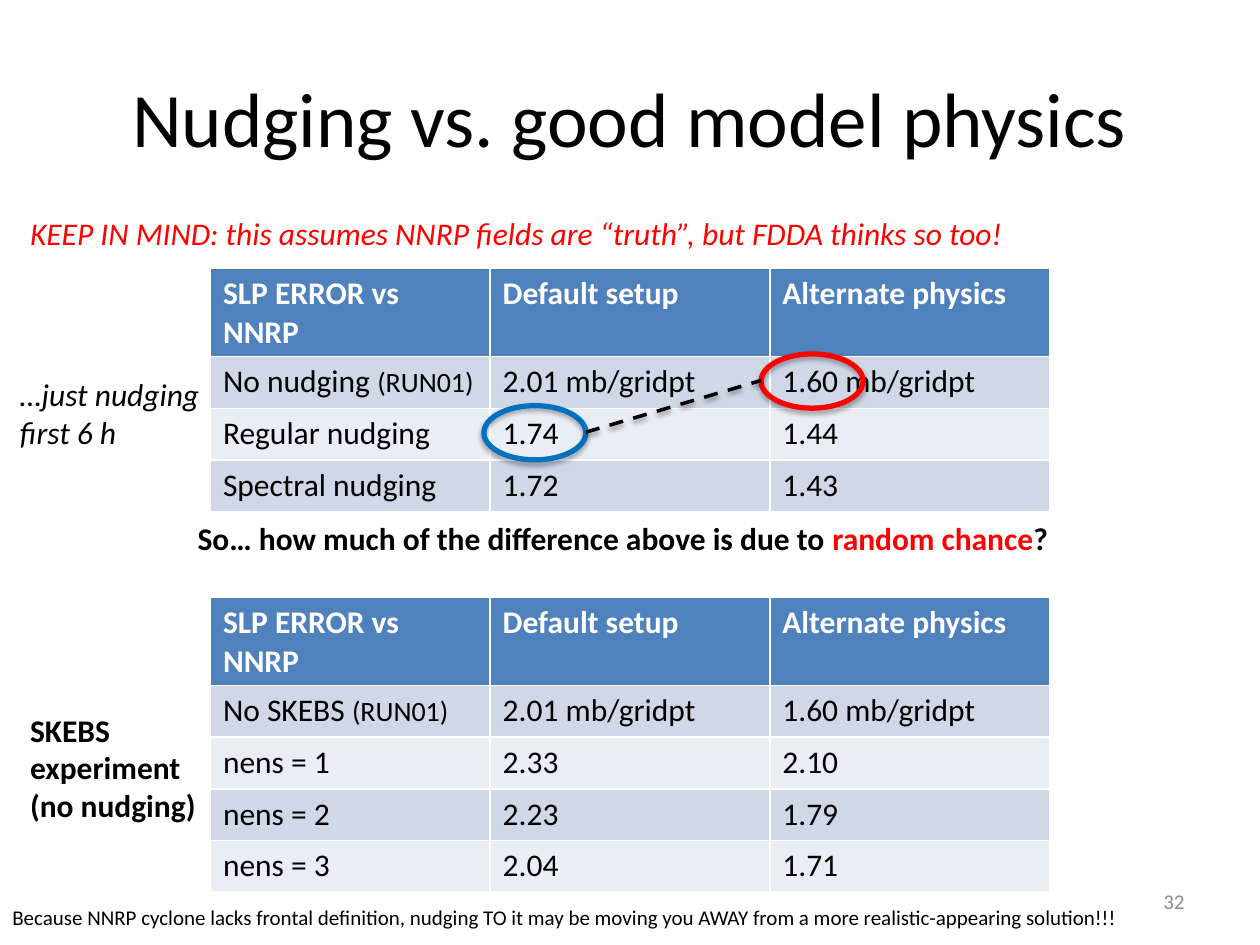
from lxml.etree import SubElement
from pptx import Presentation
from pptx.dml.color import RGBColor
from pptx.enum.dml import MSO_LINE
from pptx.enum.shapes import MSO_CONNECTOR, MSO_SHAPE
from pptx.enum.text import MSO_ANCHOR, PP_ALIGN
from pptx.oxml.ns import qn
from pptx.util import Pt

SCALE = 9144
FONT = "Calibri"
INK = {
    "black": "000000", "white": "FFFFFF", "gray": "8C8C8C",
    "red": "FF0000", "blue": "0070C0",
    "head": "4F81BD", "dark": "D0D8E8", "light": "E9EDF4",
}
HEADS = ["SLP ERROR vs NNRP", "Default setup", "Alternate physics"]
NUDGE = [
    ["No nudging |(RUN01)", "2.01 mb/gridpt", "1.60 mb/gridpt"],
    ["Regular nudging", "1.74", "1.44"],
    ["Spectral nudging", "1.72", "1.43"],
]
SKEBS = [
    ["No SKEBS |(RUN01)", "2.01 mb/gridpt", "1.60 mb/gridpt"],
    ["nens = 1", "2.33", "2.10"],
    ["nens = 2", "2.23", "1.79"],
    ["nens = 3", "2.04", "1.71"],
]


def px(*nums):
    return [n * SCALE for n in nums]


def tint(name):
    return RGBColor.from_string(INK[name])


def add_run(para, text, size=18, color="black", bold=False, slant=False):
    run = para.add_run()
    run.text = text
    font = run.font
    font.name, font.size = FONT, Pt(size)
    font.bold, font.italic = bold, slant
    font.color.rgb = tint(color)


def add_text(slide, box, lines, align=PP_ALIGN.LEFT, mid=False, wrap=False, **style):
    frame = slide.shapes.add_textbox(*px(*box)).text_frame
    frame.word_wrap = wrap
    frame.vertical_anchor = MSO_ANCHOR.MIDDLE if mid else MSO_ANCHOR.TOP
    for i, line in enumerate(lines):
        para = frame.add_paragraph() if i else frame.paragraphs[0]
        para.alignment = align
        for text, color in line:
            add_run(para, text, color=color, **style)


def add_grid(slide, box, body):
    left, top, width, step = box
    rows = [HEADS] + body
    size = px(left, top, width, step * len(rows))
    table = slide.shapes.add_table(len(rows), len(HEADS), *size).table
    for r, row in enumerate(rows):
        table.rows[r].height = step * SCALE
        for c, text in enumerate(row):
            cell = table.cell(r, c)
            cell.fill.solid()
            shade = ("dark" if r % 2 else "light") if r else "head"
            cell.fill.fore_color.rgb = tint(shade)
            para = cell.text_frame.paragraphs[0]
            for i, part in enumerate(text.split("|")):
                add_run(para, part, size=16 if i else 18,
                        color="black" if r else "white", bold=not r)


def add_shade(shape, alpha, dist):
    props = shape._element.spPr
    old = props.find(qn("a:effectLst"))
    if old is not None:
        props.remove(old)
    list_ = SubElement(props, qn("a:effectLst"))
    shade = SubElement(list_, qn("a:outerShdw"), blurRad=str(Pt(3.1)),
                       dist=str(Pt(dist)), dir="5400000", rotWithShape="0")
    color = SubElement(shade, qn("a:srgbClr"), val=INK["black"])
    SubElement(color, qn("a:alpha"), val=str(alpha * 1000))


def add_ring(slide, box, color):
    ring = slide.shapes.add_shape(MSO_SHAPE.OVAL, *px(*box))
    ring.fill.background()
    ring.line.color.rgb = tint(color)
    ring.line.width = Pt(3)
    add_shade(ring, 35, 1.8)


def add_marks(slide, box):
    left, top, width, height = box
    wide, high = 81, 43
    right, low = left + width - wide, top + height - high
    add_ring(slide, (left, low, wide, high), "blue")
    add_ring(slide, (right, top, wide, high), "red")
    ends = px(left + wide, low + high // 2, right, top + high // 2)
    link = slide.shapes.add_connector(MSO_CONNECTOR.STRAIGHT, *ends)
    link.line.color.rgb = tint("black")
    link.line.width = Pt(2)
    link.line.dash_style = MSO_LINE.DASH
    add_shade(link, 38, 1.6)


def add_notes(slide):
    add_text(slide, (147, 407, 715, 40), [[
        ("So… how much of the difference above is due to ", "black"),
        ("random chance", "red"), ("?", "black")]], bold=True)
    add_text(slide, (14, 559, 153, 101), [
        [("SKEBS", "black")], [("experiment", "black")],
        [("(no nudging)", "black")]], bold=True)
    add_text(slide, (6, 293, 172, 71), [
        [("…just nudging", "black")], [("first 6 h", "black")]], slant=True)
    add_text(slide, (14, 165, 810, 40), [[
        ("KEEP IN MIND: this assumes NNRP fields are “truth”, "
         "but FDDA thinks so too!", "red")]], slant=True)
    add_text(slide, (0, 713, 906, 30), [[
        ("Because NNRP cyclone lacks frontal definition, nudging TO it may be "
         "moving you AWAY from a more realistic-appearing solution!!!",
         "black")]], size=12)


def main():
    deck = Presentation()
    deck.slide_width, deck.slide_height = px(1000, 750)
    slide = deck.slides.add_slide(deck.slide_layouts[6])
    add_text(slide, (50, 30, 900, 125),
             [[("Nudging vs. good model physics", "black")]],
             align=PP_ALIGN.CENTER, mid=True, wrap=True, size=44)
    add_text(slide, (717, 695, 233, 40), [[("32", "gray")]],
             align=PP_ALIGN.RIGHT, mid=True, wrap=True, size=12)
    add_grid(slide, (167, 213, 666, 41), NUDGE)
    add_grid(slide, (167, 474, 666, 41), SKEBS)
    add_notes(slide)
    add_marks(slide, (384, 281, 301, 84))
    deck.save("out.pptx")


if __name__ == "__main__":
    main()
